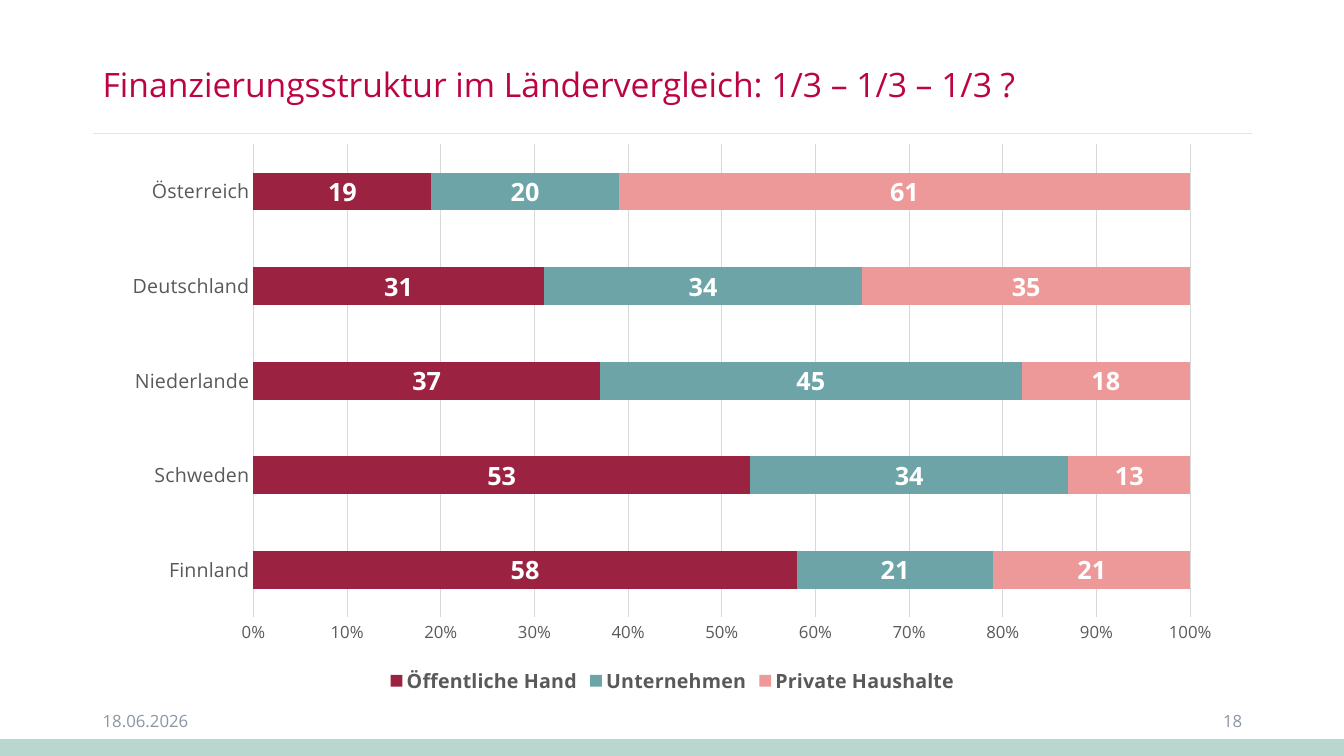
from lxml import etree
from pptx import Presentation
from pptx.chart.data import CategoryChartData
from pptx.dml.color import RGBColor
from pptx.enum.chart import XL_CHART_TYPE, XL_LEGEND_POSITION, XL_TICK_MARK
from pptx.enum.shapes import MSO_CONNECTOR, MSO_SHAPE
from pptx.enum.text import MSO_ANCHOR, PP_ALIGN
from pptx.oxml import parse_xml
from pptx.oxml.ns import nsdecls, qn
from pptx.util import Inches, Pt

FONT = "Open Sans"
TITLE_RED = RGBColor(0xBC, 0x04, 0x44)
FOOTER_GREY = RGBColor(0x89, 0x96, 0xA4)
RULE_GREY = RGBColor(0xE4, 0xE4, 0xE3)
MINT = RGBColor(0xB8, 0xD8, 0xCF)
AXIS_TEXT = RGBColor(0x59, 0x59, 0x59)
GRID_GREY = RGBColor(0xD9, 0xD9, 0xD9)
BLACK = RGBColor(0, 0, 0)
WHITE = RGBColor(0xFF, 0xFF, 0xFF)

SLIDE_WIDTH, SLIDE_HEIGHT = 13.33, 7.5
COUNTRIES = ["Finnland", "Schweden", "Niederlande", "Deutschland", "Österreich"]
FUNDING = [
    ("Öffentliche Hand", [58, 53, 37, 31, 19], RGBColor(0x9B, 0x23, 0x41)),
    ("Unternehmen", [21, 34, 45, 34, 20], RGBColor(0x6D, 0xA4, 0xA7)),
    ("Private Haushalte", [21, 13, 18, 35, 61], RGBColor(0xEE, 0x99, 0x99)),
]
# Plot area as fractions of the chart frame
PLOT_LAYOUT = {"x": 0.127, "y": 0.02, "w": 0.834, "h": 0.836}


def set_font(font, size, color, bold=False):
    font.name = FONT
    font.size = Pt(size)
    font.bold = bold
    font.color.rgb = color


def add_text(slide, text, box, size, color, align=PP_ALIGN.LEFT, line_spacing=1.0):
    shape = slide.shapes.add_textbox(*(Inches(length) for length in box))
    frame = shape.text_frame
    frame.word_wrap = True
    frame.vertical_anchor = MSO_ANCHOR.MIDDLE
    paragraph = frame.paragraphs[0]
    paragraph.alignment = align
    paragraph.line_spacing = line_spacing
    run = paragraph.add_run()
    run.text = text
    set_font(run.font, size, color)


def add_header(slide, box):
    left, top, width, height = box
    # Rule along the bottom of the title
    bottom = Inches(top + height)
    rule = slide.shapes.add_connector(
        MSO_CONNECTOR.STRAIGHT, Inches(left), bottom, Inches(left + width), bottom)
    rule.line.color.rgb = RULE_GREY
    rule.line.width = Pt(0.5)
    etree.SubElement(rule._element.spPr, qn("a:effectLst"))
    add_text(slide, "Finanzierungsstruktur im Ländervergleich: 1/3 – 1/3 – 1/3 ?",
             box, 24, TITLE_RED, line_spacing=0.9)


def add_footer(slide, box):
    left, top, width, height = box
    # Coloured band at the foot of the slide
    band_height = 0.16
    band = slide.shapes.add_shape(
        MSO_SHAPE.RECTANGLE, 0, Inches(SLIDE_HEIGHT - band_height),
        Inches(SLIDE_WIDTH), Inches(band_height))
    band.shadow.inherit = False
    band.fill.solid()
    band.fill.fore_color.rgb = MINT
    band.line.color.rgb = MINT
    band.line.width = Pt(1)
    # Date and slide number
    field_width = 3
    add_text(slide, "18.06.2026", (left, top, field_width, height), 12, FOOTER_GREY)
    add_text(slide, "18", (left + width - field_width, top, field_width, height),
             12, FOOTER_GREY, align=PP_ALIGN.RIGHT)


def set_line(line, color):
    line.color.rgb = color
    line.width = Pt(0.75)


def format_axes(chart):
    countries, shares = chart.category_axis, chart.value_axis
    for axis, size in ((countries, 14), (shares, 12)):
        axis.major_tick_mark = axis.minor_tick_mark = XL_TICK_MARK.NONE
        set_font(axis.tick_labels.font, size, AXIS_TEXT)
    countries.has_major_gridlines = False
    set_line(countries.format.line, GRID_GREY)
    shares.minimum_scale, shares.maximum_scale, shares.major_unit = 0, 1, 0.1
    shares.tick_labels.number_format = "0%"
    shares.tick_labels.number_format_is_linked = False
    shares.has_major_gridlines = True
    set_line(shares.major_gridlines.format.line, GRID_GREY)
    shares.format.line.fill.background()


def set_plot_layout(chart):
    sizes = "".join(f'<c:{key} val="{value}"/>' for key, value in PLOT_LAYOUT.items())
    layout = parse_xml(
        f'<c:layout {nsdecls("c")}><c:manualLayout><c:layoutTarget val="inner"/>'
        f'<c:xMode val="edge"/><c:yMode val="edge"/>{sizes}</c:manualLayout></c:layout>')
    plot_area = chart._chartSpace.chart.plotArea
    for automatic in plot_area.findall(qn("c:layout")):
        plot_area.remove(automatic)
    plot_area.insert(0, layout)


def add_funding_chart(slide, box):
    data = CategoryChartData(number_format="0")
    data.categories = COUNTRIES
    for name, values, _ in FUNDING:
        data.add_series(name, values)
    chart = slide.shapes.add_chart(
        XL_CHART_TYPE.BAR_STACKED_100, *(Inches(length) for length in box), data).chart
    set_font(chart.font, 10, BLACK)
    chart.has_title = False

    # Bars and their values
    plot = chart.plots[0]
    plot.gap_width, plot.overlap = 150, 100
    plot.vary_by_categories = False
    for series, (_, _, color) in zip(plot.series, FUNDING):
        series.format.fill.solid()
        series.format.fill.fore_color.rgb = color
        series.data_labels.show_value = True
        set_font(series.data_labels.font, 18, WHITE, bold=True)

    format_axes(chart)
    set_plot_layout(chart)

    # Legend
    chart.has_legend = True
    chart.legend.position = XL_LEGEND_POSITION.BOTTOM
    chart.legend.include_in_layout = False
    set_font(chart.legend.font, 14, AXIS_TEXT, bold=True)


def main():
    presentation = Presentation()
    presentation.slide_width = Inches(SLIDE_WIDTH)
    presentation.slide_height = Inches(SLIDE_HEIGHT)
    slide = presentation.slides.add_slide(presentation.slide_layouts[6])
    add_header(slide, (0.92, 0.4, 11.5, 0.92))
    add_footer(slide, (0.92, 6.95, 11.5, 0.4))
    add_funding_chart(slide, (1.1, 1.32, 11.14, 5.61))
    presentation.save("out.pptx")


if __name__ == "__main__":
    main()
